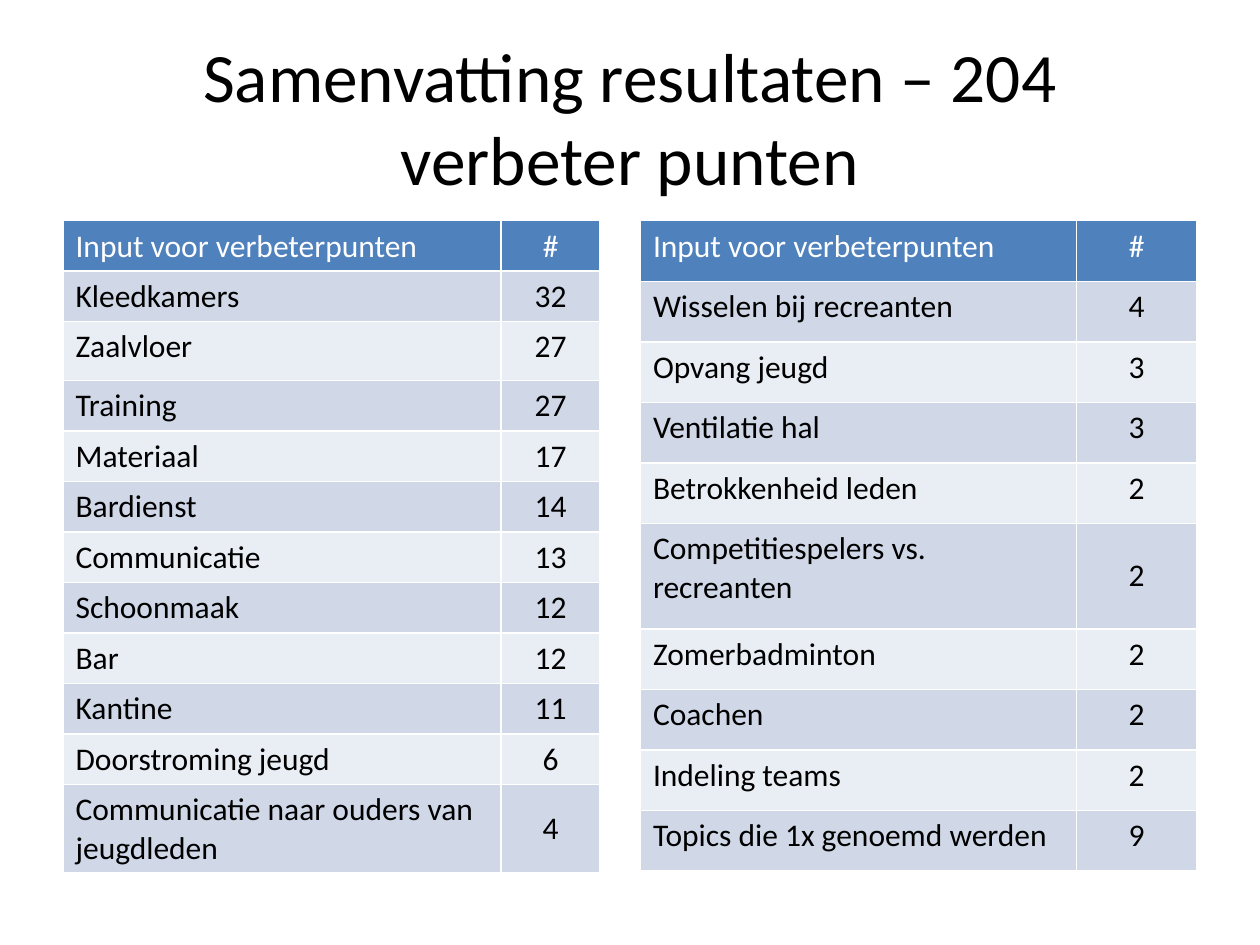
from dataclasses import dataclass

import pptx
import pptx.dml.color
import pptx.enum.text
import pptx.util

Cm = pptx.util.Cm
RGBColor = pptx.dml.color.RGBColor
Align = pptx.enum.text.PP_ALIGN
Anchor = pptx.enum.text.MSO_ANCHOR

BLACK = RGBColor(0x00, 0x00, 0x00)
WHITE = RGBColor(0xFF, 0xFF, 0xFF)
HEADER_BLUE = RGBColor(0x4F, 0x81, 0xBD)
BANDS = (RGBColor(0xE9, 0xED, 0xF4), RGBColor(0xD0, 0xD8, 0xE8))

HEADER = ("Input voor verbeterpunten", "#")
TABLE_TOP = 4.45


@dataclass(frozen=True)
class ScoreTable:
    left: float
    topic_width: float
    count_width: float
    row_height: float
    special_heights: dict[str, float]
    centred_topic: str
    scores: tuple[tuple[str, int], ...]


MAIN_POINTS = ScoreTable(
    left=1.27, topic_width=8.83, count_width=2, row_height=1,
    special_heights={"Zaalvloer": 1.19, "Communicatie naar ouders van jeugdleden": 1.73},
    centred_topic="Communicatie naar ouders van jeugdleden",
    scores=(
        ("Kleedkamers", 32),
        ("Zaalvloer", 27),
        ("Training", 27),
        ("Materiaal", 17),
        ("Bardienst", 14),
        ("Communicatie", 13),
        ("Schoonmaak", 12),
        ("Bar", 12),
        ("Kantine", 11),
        ("Doorstroming jeugd", 6),
        ("Communicatie naar ouders van jeugdleden", 4),
    ),
)

OTHER_POINTS = ScoreTable(
    left=12.91, topic_width=8.79, count_width=2.43, row_height=1.22,
    special_heights={"Competitiespelers vs. recreanten": 2.13},
    centred_topic="Competitiespelers vs. recreanten",
    scores=(
        ("Wisselen bij recreanten", 4),
        ("Opvang jeugd", 3),
        ("Ventilatie hal", 3),
        ("Betrokkenheid leden", 2),
        ("Competitiespelers vs. recreanten", 2),
        ("Zomerbadminton", 2),
        ("Coachen", 2),
        ("Indeling teams", 2),
        ("Topics die 1x genoemd werden", 9),
    ),
)


def write_text(frame, text: str, *, size: float = 18, color: RGBColor = BLACK,
               align: Align = Align.LEFT) -> None:
    paragraph = frame.paragraphs[0]
    paragraph.alignment = align
    run = paragraph.add_run()
    run.text = text
    run.font.name = "Calibri"
    run.font.size = pptx.util.Pt(size)
    run.font.bold = False
    run.font.color.rgb = color


def draw_title(slide, text: str) -> None:
    title = slide.shapes.add_textbox(Cm(1.27), Cm(0.76), Cm(22.86), Cm(3.18)).text_frame
    title.word_wrap = True
    title.vertical_anchor = Anchor.MIDDLE
    title.margin_left = title.margin_right = Cm(0.6)
    write_text(title, text, size=39.6, align=Align.CENTER)


def draw_scores(slide, points: ScoreTable) -> None:
    rows = (HEADER, *points.scores)
    heights = [points.special_heights.get(topic, points.row_height) for topic, _ in rows]
    grid = slide.shapes.add_table(
        len(rows), 2, Cm(points.left), Cm(TABLE_TOP),
        Cm(points.topic_width + points.count_width), Cm(sum(heights)),
    ).table
    grid.columns[0].width = Cm(points.topic_width)
    grid.columns[1].width = Cm(points.count_width)
    for index, (row, height) in enumerate(zip(rows, heights)):
        grid.rows[index].height = Cm(height)
        for column, (value, align) in enumerate(zip(row, (Align.LEFT, Align.CENTER))):
            cell = grid.cell(index, column)
            cell.fill.solid()
            cell.fill.fore_color.rgb = BANDS[index % 2] if index else HEADER_BLUE
            if column == 1 and row[0] == points.centred_topic:
                cell.vertical_anchor = Anchor.MIDDLE
            write_text(cell.text_frame, str(value), align=align,
                       color=BLACK if index else WHITE)


def main() -> None:
    deck = pptx.Presentation()
    deck.slide_width = Cm(25.4)
    deck.slide_height = Cm(19.05)
    slide = deck.slides.add_slide(deck.slide_layouts[6])
    draw_title(slide, "Samenvatting resultaten – 204 verbeter punten")
    for points in (MAIN_POINTS, OTHER_POINTS):
        draw_scores(slide, points)
    deck.save("out.pptx")


if __name__ == "__main__":
    main()
